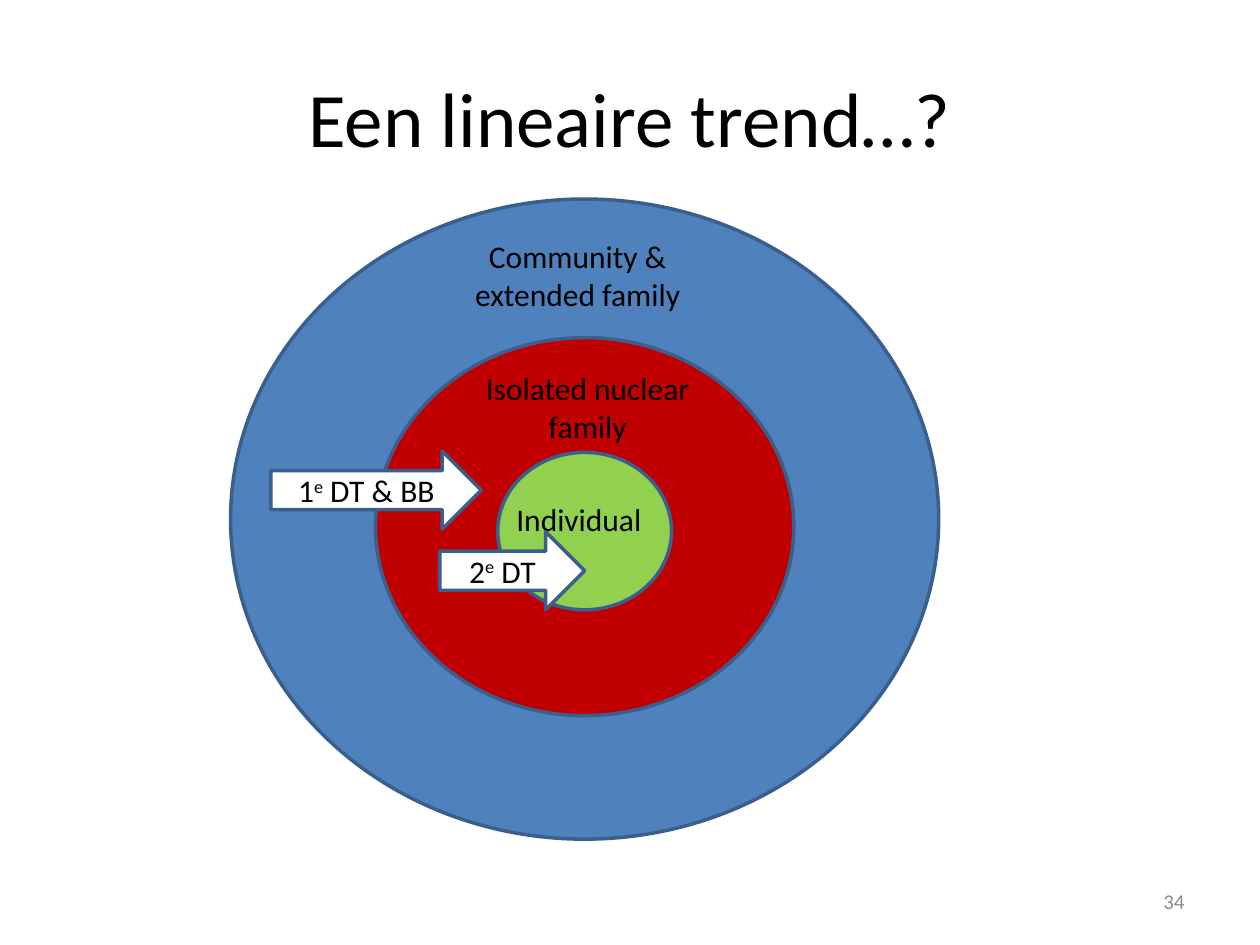
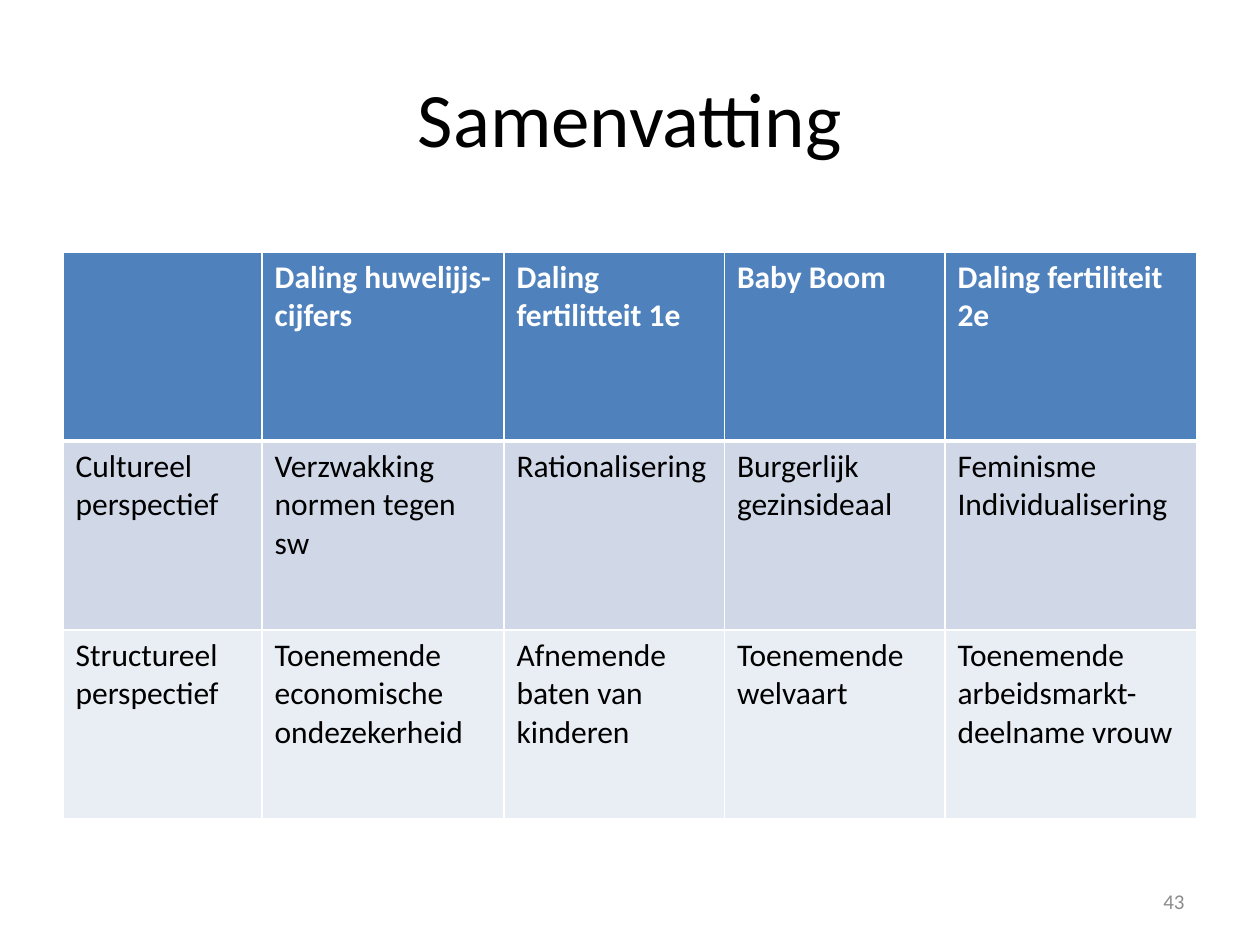
from lxml.etree import SubElement
from pptx import Presentation
from pptx.dml.color import RGBColor
from pptx.enum.shapes import MSO_SHAPE as Shape
from pptx.enum.text import MSO_ANCHOR as Anchor, PP_ALIGN as Align
from pptx.oxml.ns import qn
from pptx.util import Inches, Pt

COLORS = {
    "text": "000000", "white": "FFFFFF", "number": "8C8C8C",
    "community": "4F81BD", "family": "C00000", "individual": "92D050",
    "outline": "3A5F8C", "header": "4F81BD",
    "cultural": "D0D8E8", "structural": "E9EDF4",
}
FORMATS = {
    "title": {"name": "Calibri", "size": Pt(44), "bold": False},
    "number": {"name": "Calibri", "size": Pt(12), "bold": False},
    "body": {"name": "Calibri", "size": Pt(18), "bold": False},
    "heading": {"name": "Calibri", "size": Pt(18), "bold": True},
}
RING_CENTER = 4.64
RINGS = [  # colour, top, width, height
    ("community", 1.58, 5.62, 5.08),
    ("family", 2.68, 3.32, 3),
    ("individual", 3.59, 1.38, 1.25),
]
RING_LABELS = [  # text, left, top, height, alignment
    ("Community & extended family", 3.42, 1.83, 0.71, Align.CENTER),
    ("Isolated nuclear family", 3.5, 2.88, 0.71, Align.CENTER),
    ("Individual", 4, 3.92, 0.4, Align.LEFT),
]
TRANSITIONS = [  # ordinal, rest of the label, left, top, width
    ("1", " DT & BB", 2.15, 3.58, 1.67),
    ("2", " DT", 3.49, 4.22, 1.15),
]
COLUMN_WIDTHS = [1.58, 1.92, 1.75, 1.75, 2]
ROW_HEIGHT = 1.5
ROW_FILLS = ["header", "cultural", "structural"]
SUMMARY = [
    ["", "Daling huwelijjs-cijfers", "Daling fertilitteit 1e", "Baby Boom",
     "Daling fertiliteit 2e"],
    ["Cultureel perspectief", "Verzwakking normen tegen sw",
     "Rationalisering", "Burgerlijk gezinsideaal",
     "Feminisme\nIndividualisering"],
    ["Structureel perspectief", "Toenemende economische ondezekerheid",
     "Afnemende baten van kinderen", "Toenemende welvaart",
     "Toenemende arbeidsmarkt-deelname vrouw"],
]


def rgb(color):
    return RGBColor.from_string(COLORS[color])


def box(*lengths):
    return [Inches(length) for length in lengths]


def style_font(font, style, color):
    for attribute, value in FORMATS[style].items():
        setattr(font, attribute, value)
    font.color.rgb = rgb(color)


def write_text(frame, text, style="body", color="text", align=Align.LEFT):
    """Fill a text frame, one paragraph for each line of text."""
    frame.text = text
    for paragraph in frame.paragraphs:
        paragraph.alignment = align
        for run in paragraph.runs:
            style_font(run.font, style, color)


def add_label(slide, text, bounds, anchor=Anchor.TOP, **text_format):
    frame = slide.shapes.add_textbox(*box(*bounds)).text_frame
    frame.word_wrap = True
    frame.vertical_anchor = anchor
    write_text(frame, text, **text_format)


def add_titled_slide(deck, title, number):
    slide = deck.slides.add_slide(deck.slide_layouts[6])
    add_label(slide, title, (0.5, 0.3, 9, 1.25), Anchor.MIDDLE,
              style="title", align=Align.CENTER)
    add_label(slide, number, (7.17, 6.95, 2.33, 0.4), Anchor.MIDDLE,
              style="number", color="number", align=Align.RIGHT)
    return slide


def add_outlined_shape(slide, kind, bounds, fill):
    shape = slide.shapes.add_shape(kind, *box(*bounds))
    shape.shadow.inherit = False
    shape.fill.solid()
    shape.fill.fore_color.rgb = rgb(fill)
    shape.line.color.rgb = rgb("outline")
    shape.line.width = Pt(2)
    return shape


def add_transition_arrow(slide, ordinal, rest, left, top, width):
    """Draw an arrow whose ordinal carries a raised "e"."""
    arrow = add_outlined_shape(slide, Shape.RIGHT_ARROW,
                               (left, top, width, 0.62), "white")
    frame = arrow.text_frame
    frame.vertical_anchor = Anchor.MIDDLE
    paragraph = frame.paragraphs[0]
    paragraph.alignment = Align.CENTER
    for text, baseline in ((ordinal, 0), ("e", 30000), (rest, 0)):
        run = paragraph.add_run()
        run.text = text
        style_font(run.font, "body", "text")
        run.font._element.set("baseline", str(baseline))


def set_borders(cell, top, bottom):
    """Give a cell white borders; top and bottom are widths in points."""
    properties = cell._tc.get_or_add_tcPr()
    for side, width in (("L", 1), ("R", 1), ("T", top), ("B", bottom)):
        line = SubElement(properties, qn(f"a:ln{side}"), w=str(Pt(width)))
        fill = SubElement(line, qn("a:solidFill"))
        SubElement(fill, qn("a:srgbClr"), val=COLORS["white"])


def add_summary_table(slide):
    size = len(SUMMARY), len(COLUMN_WIDTHS)
    bounds = box(0.5, 2, sum(COLUMN_WIDTHS), ROW_HEIGHT * len(SUMMARY))
    table = slide.shapes.add_table(*size, *bounds).table
    table.horz_banding = False
    for column, width in zip(table.columns, COLUMN_WIDTHS):
        column.width = Inches(width)
    for index, (row, texts) in enumerate(zip(table.rows, SUMMARY)):
        row.height = Inches(ROW_HEIGHT)
        is_header = index == 0
        style, color = ("heading", "white") if is_header else ("body", "text")
        for cell, text in zip(row.cells, texts):
            set_borders(cell, top=3 if index == 1 else 1,
                        bottom=3 if is_header else 1)
            cell.fill.solid()
            cell.fill.fore_color.rgb = rgb(ROW_FILLS[index])
            write_text(cell.text_frame, text, style, color)


def add_ring_diagram(slide):
    for color, top, width, height in RINGS:
        bounds = (RING_CENTER - width / 2, top, width, height)
        add_outlined_shape(slide, Shape.OVAL, bounds, color)
    for text, left, top, height, align in RING_LABELS:
        add_label(slide, text, (left, top, 2.33, height), align=align)
    for transition in TRANSITIONS:
        add_transition_arrow(slide, *transition)


def main():
    deck = Presentation()
    deck.slide_width, deck.slide_height = box(10, 7.5)
    add_ring_diagram(add_titled_slide(deck, "Een lineaire trend…?", "34"))
    add_summary_table(add_titled_slide(deck, "Samenvatting", "43"))
    deck.save("out.pptx")


if __name__ == "__main__":
    main()
